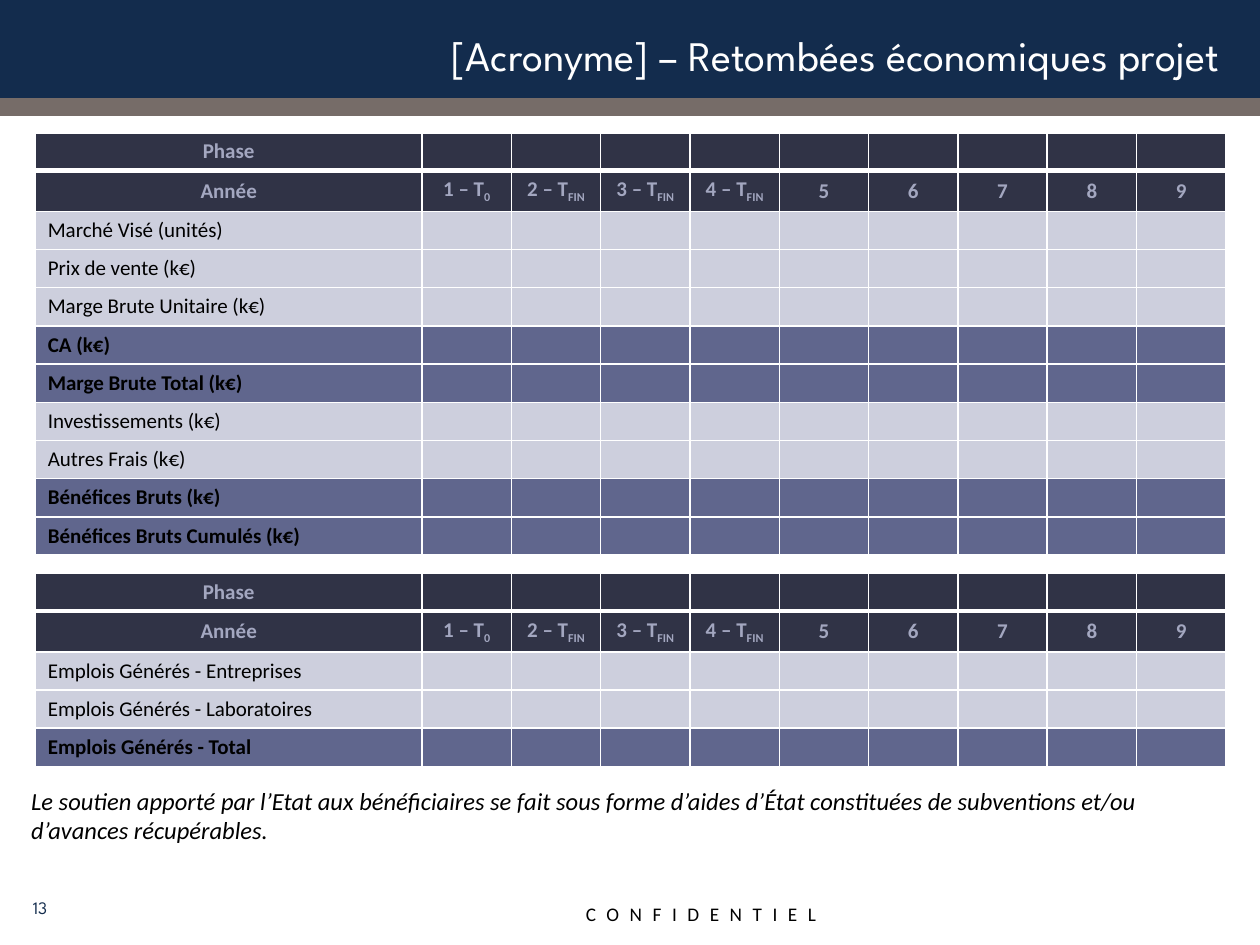
import lxml.etree
import pptx
import pptx.dml.color
import pptx.enum.shapes
import pptx.enum.text
import pptx.oxml.ns
import pptx.util

Cm, Pt = pptx.util.Cm, pptx.util.Pt
ALIGN = pptx.enum.text.PP_ALIGN
MIDDLE = pptx.enum.text.MSO_ANCHOR.MIDDLE
NAVY, TAUPE, WHITE, BLACK = "132C4D", "766C68", "FFFFFF", "000000"
HEAD_FILL, HEAD_TEXT, PLAIN_FILL, TOTAL_FILL = "303346", "A3A7C0", "CDCFDD", "60668D"
YEARS = [("1 – T", "0")] + [(f"{n} – T", "FIN") for n in (2, 3, 4)] + [(str(n), "") for n in range(5, 10)]
RETURNS = [
    ("Marché Visé (unités)", False),
    ("Prix de vente (k€)", False),
    ("Marge Brute Unitaire (k€)", False),
    ("CA (k€)", True),
    ("Marge Brute Total (k€)", True),
    ("Investissements (k€)", False),
    ("Autres Frais (k€)", False),
    ("Bénéfices Bruts (k€)", True),
    ("Bénéfices Bruts Cumulés (k€)", True),
]
JOBS = [
    ("Emplois Générés - Entreprises", False),
    ("Emplois Générés - Laboratoires", False),
    ("Emplois Générés - Total", True),
]
SUPPORT = ("Le soutien apporté par l’Etat aux bénéficiaires se fait sous forme d’aides d’État "
           "constituées de subventions et/ou d’avances récupérables.")


def rgb(value):
    """Return the colour for a hex string."""
    return pptx.dml.color.RGBColor.from_string(value)


def style(p, size, color, name="Calibri", bold=False, italic=False):
    """Set the font of a whole paragraph."""
    f = p.font
    f.size, f.name, f.bold, f.italic = Pt(size), name, bold, italic
    f.color.rgb = rgb(color)


def add_band(s, left, top, width, height, color):
    """Add a plain filled rectangle."""
    sp = s.shapes.add_shape(pptx.enum.shapes.MSO_SHAPE.RECTANGLE, Cm(left), Cm(top), Cm(width), Cm(height))
    sp.shadow.inherit = False
    sp.fill.solid()
    sp.fill.fore_color.rgb = rgb(color)
    sp.line.fill.background()


def add_text(s, left, top, width, height, text, size, color, align=ALIGN.LEFT, anchor=None, wrap=True, **font):
    """Add a one-paragraph text box and return its run."""
    tf = s.shapes.add_textbox(Cm(left), Cm(top), Cm(width), Cm(height)).text_frame
    tf.word_wrap = wrap
    tf.vertical_anchor = anchor
    p = tf.paragraphs[0]
    p.alignment = align
    style(p, size, color, **font)
    r = p.add_run()
    r.text = text
    return r


def add_header(s, left, top, width, height):
    """Draw the title band with its lower stripe."""
    add_band(s, left, top, width, height - 0.06, NAVY)
    add_band(s, left, top + height - 0.36, width, 0.36, TAUPE)
    add_text(s, left + 0.38, top + 0.36, width - 0.94, 1.47, "[Acronyme] – Retombées économiques projet",
             24, WHITE, ALIGN.RIGHT, MIDDLE, name="League Spartan")


def add_footer(s, left, top):
    """Draw the page number and the confidentiality mark."""
    add_text(s, left - 0.1, top, 1.3, 1.02, "13", 10, NAVY, ALIGN.RIGHT, MIDDLE, name="League Spartan")
    r = add_text(s, left + 11.56, top + 0.28, 5.41, 0.74, "CONFIDENTIEL", 11, BLACK, wrap=False)
    r._r.get_or_add_rPr().set("spc", "600")


def set_borders(cell, **widths):
    """Give a cell white borders, with widths in points by side."""
    props = cell._tc.get_or_add_tcPr()
    for i, (side, width) in enumerate(widths.items()):
        ln = lxml.etree.Element(pptx.oxml.ns.qn(f"a:ln{side}"), w=str(Pt(width)))
        fill = lxml.etree.SubElement(ln, pptx.oxml.ns.qn("a:solidFill"))
        lxml.etree.SubElement(fill, pptx.oxml.ns.qn("a:srgbClr"), val=WHITE)
        props.insert(i, ln)


def fill_cell(cell, fill, color, text="", subscript="", bold=False, align=ALIGN.LEFT):
    """Fill a cell and write its text with an optional subscript."""
    cell.fill.solid()
    cell.fill.fore_color.rgb = rgb(fill)
    cell.vertical_anchor = MIDDLE
    cell.margin_top = cell.margin_bottom = Cm(0.1)
    p = cell.text_frame.paragraphs[0]
    p.alignment = align
    style(p, 12, color, bold=bold)
    if text:
        p.add_run().text = text
    else:
        lxml.etree.SubElement(p._p, pptx.oxml.ns.qn("a:endParaRPr"), sz="1200")
    if subscript:
        r = p.add_run()
        r.text = subscript
        r._r.get_or_add_rPr().set("baseline", "-25000")


def add_year_table(s, left, top, width, lines):
    """Draw a table with two header rows and one row for each line."""
    heights = [0.76, 0.82] + [0.77] * len(lines)
    table = s.shapes.add_table(len(heights), len(YEARS) + 1, Cm(left), Cm(top), Cm(width), Cm(sum(heights))).table
    table.first_row = table.horz_banding = False
    year_width = 1.8
    for i, column in enumerate(table.columns):
        column.width = Cm(year_width if i else width - year_width * len(YEARS))
    for row, height in zip(table.rows, heights):
        row.height = Cm(height)
    for i, year in enumerate([("Année", "")] + YEARS):
        phase = table.cell(0, i)
        fill_cell(phase, HEAD_FILL, HEAD_TEXT, "" if i else "Phase", bold=True, align=ALIGN.CENTER)
        set_borders(phase, L=1, R=1, T=1, B=3)
        fill_cell(table.cell(1, i), HEAD_FILL, HEAD_TEXT, *year, bold=True, align=ALIGN.CENTER)
    for j, (label, total) in enumerate(lines, 2):
        for i in range(len(YEARS) + 1):
            fill_cell(table.cell(j, i), TOTAL_FILL if total else PLAIN_FILL, BLACK, "" if i else label, bold=total)


def main():
    """Build and save the slide."""
    prs = pptx.Presentation()
    prs.slide_width, prs.slide_height = Cm(25.4), Cm(19.05)
    s = prs.slides.add_slide(prs.slide_layouts[6])
    add_header(s, 0, 0, 25.4, 2.34)
    add_year_table(s, 0.71, 2.68, 24, RETURNS)
    add_year_table(s, 0.71, 11.56, 24, JOBS)
    add_text(s, 0.38, 15.72, 24.46, 1.45, SUPPORT, 14, BLACK, italic=True)
    add_footer(s, 0, 17.78)
    prs.save("out.pptx")


if __name__ == "__main__":
    main()
